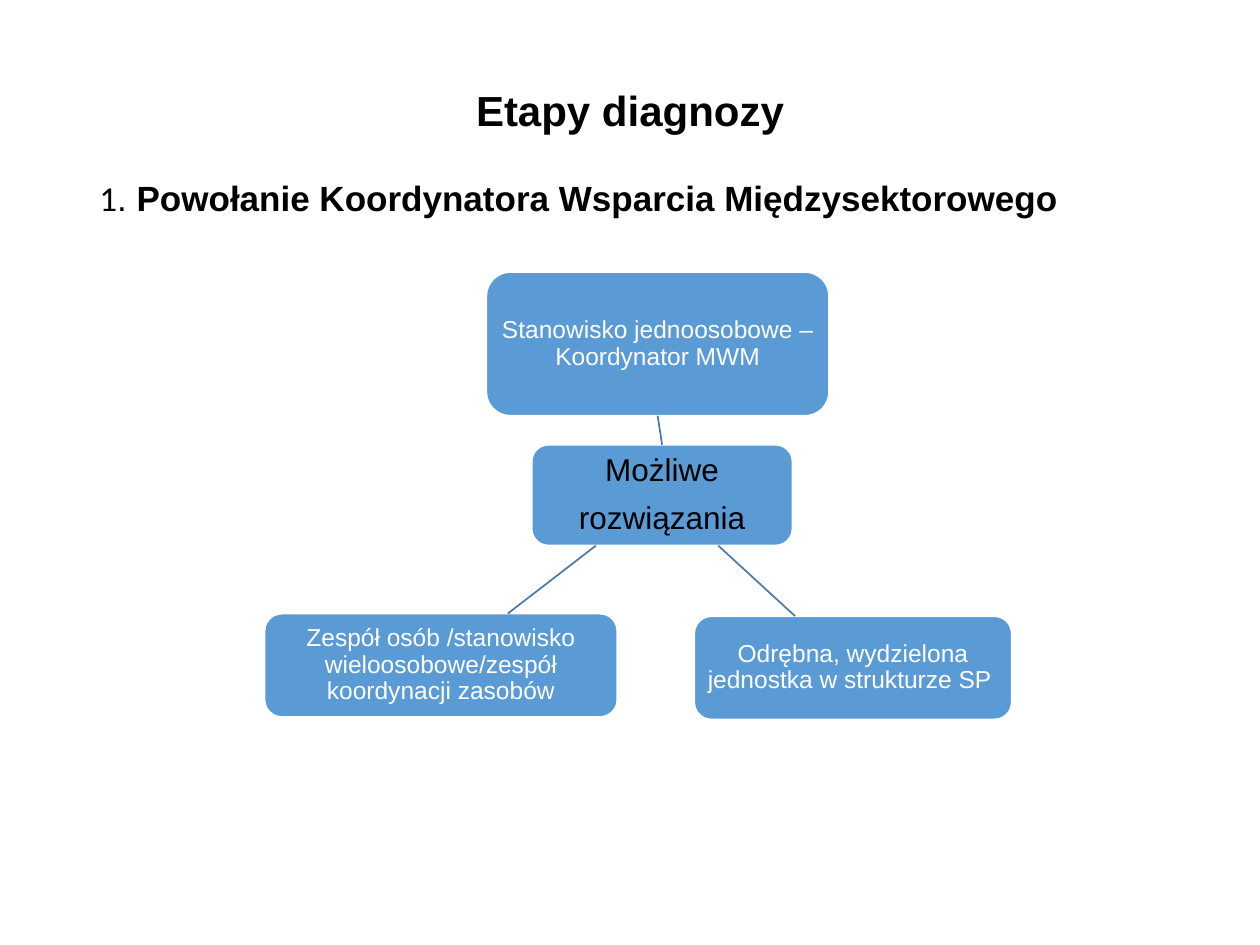
import pptx
import pptx.dml.color
import pptx.enum.shapes
import pptx.enum.text
import pptx.oxml.ns
import pptx.util
from pptx.util import Inches

ANCHOR = pptx.enum.text.MSO_ANCHOR
ALIGN = pptx.enum.text.PP_ALIGN
BLUE, LINE_BLUE, WHITE, BLACK = "5B9BD5", "497CAB", "FFFFFF", "000000"


def rgb(value):
    """Return the colour for a hex string."""
    return pptx.dml.color.RGBColor.from_string(value)


def style(font, size, color, name="Arial", bold=False):
    """Set the look of a font."""
    font.name, font.size, font.bold = name, pptx.util.Pt(size), bold
    font.color.rgb = rgb(color)


def add_text_box(s, box, anchor):
    """Add a wrapping text box and return its first paragraph."""
    tf = s.shapes.add_textbox(*map(Inches, box)).text_frame
    tf.word_wrap, tf.vertical_anchor = True, anchor
    p = tf.paragraphs[0]
    p.line_spacing = 0.9
    return p


def add_title(s, box, text):
    """Add the centred slide title."""
    p = add_text_box(s, box, ANCHOR.MIDDLE)
    p.text, p.alignment = text, ALIGN.CENTER
    style(p.font, 24, BLACK, bold=True)


def add_step(s, box, number, text):
    """Add the numbered step heading."""
    p = add_text_box(s, box, ANCHOR.TOP)
    for part, name, bold in ((number, "Calibri", False), (". ", "Arial", False), (text, "Arial", True)):
        r = p.add_run()
        r.text = part
        style(r.font, 20, BLACK, name, bold)


def add_node(s, box, lines, size=14, color=WHITE):
    """Add a rounded box with centred text."""
    sp = s.shapes.add_shape(pptx.enum.shapes.MSO_SHAPE.ROUNDED_RECTANGLE, *map(Inches, box))
    sp.shadow.inherit = False
    sp.fill.solid()
    sp.fill.fore_color.rgb = rgb(BLUE)
    sp.line.color.rgb = rgb(WHITE)
    sp.line.width = pptx.util.Pt(1)
    tf = sp.text_frame
    tf.word_wrap, tf.vertical_anchor = True, ANCHOR.MIDDLE
    tf.margin_left = tf.margin_right = tf.margin_top = tf.margin_bottom = Inches(0.04)
    for i, line in enumerate(lines):
        p = tf.add_paragraph() if i else tf.paragraphs[0]
        p.text, p.alignment, p.line_spacing = line, ALIGN.CENTER, 0.9
        p.space_after = pptx.util.Pt(round(0.42 * size, 1))
        style(p.font, size, color)
    return sp


def add_link(s, start, end):
    """Add a thin straight line between two points."""
    link = s.shapes.add_connector(
        pptx.enum.shapes.MSO_CONNECTOR.STRAIGHT, *map(Inches, start + end))
    link.line.color.rgb = rgb(LINE_BLUE)
    link.line.width = pptx.util.Pt(1)
    link._element.spPr.append(pptx.oxml.xmlchemy.OxmlElement("a:effectLst"))
    return link


def add_solutions(s, left, top):
    """Add the diagram of possible solutions from its top left corner."""
    def at(x, y):
        return left + x, top + y

    center = add_node(s, at(2.12, 1.37) + (2.07, 0.8), ["Możliwe", "rozwiązania"], 18, BLACK)
    single = add_node(s, at(1.76, 0) + (2.72, 1.14), ["Stanowisko jednoosobowe – Koordynator MWM"])
    add_node(s, at(3.41, 2.73) + (2.52, 0.82), ["Odrębna, wydzielona jednostka w strukturze SP "])
    add_node(s, at(0, 2.71) + (2.8, 0.82),
             ["Zespół osób /stanowisko wieloosobowe/zespół koordynacji zasobów"])
    link = add_link(s, at(3.14, 1.37), at(3.14, 1.14))
    link.begin_connect(center, 0)
    link.end_connect(single, 2)
    add_link(s, at(3.6, 2.17), at(4.21, 2.73))
    add_link(s, at(2.63, 2.17), at(1.93, 2.71))


def main():
    """Build and save the slide."""
    prs = pptx.Presentation()
    prs.slide_width, prs.slide_height = Inches(10), Inches(7.5)
    s = prs.slides.add_slide(prs.slide_layouts[6])
    add_title(s, (0.69, 0.4, 8.62, 1), "Etapy diagnozy")
    add_step(s, (0.69, 1.39, 8.84, 0.49), "1", "Powołanie Koordynatora Wsparcia Międzysektorowego")
    add_solutions(s, 2.1, 2.16)
    prs.save("out.pptx")


if __name__ == "__main__":
    main()
